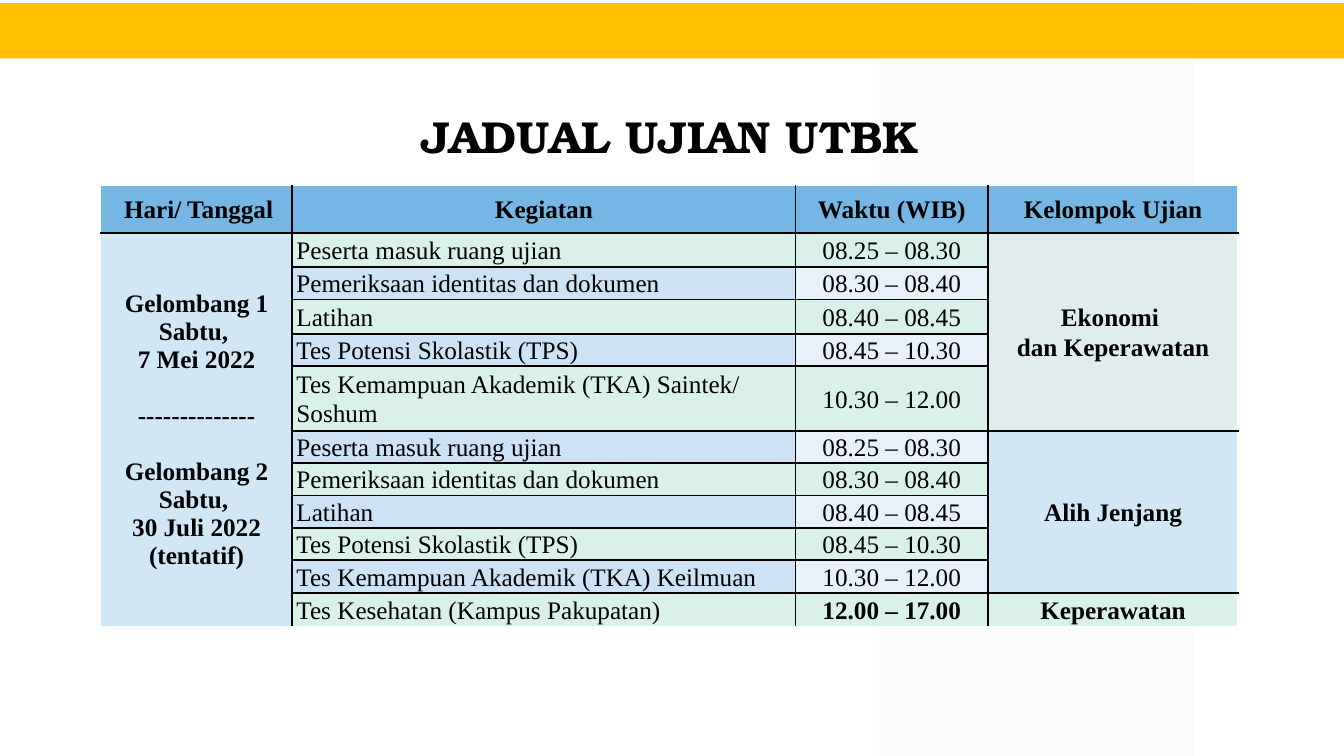
from lxml import etree
from pptx import Presentation
from pptx.dml.color import RGBColor
from pptx.enum.shapes import MSO_SHAPE
from pptx.enum.text import MSO_ANCHOR, PP_ALIGN
from pptx.oxml.ns import qn
from pptx.util import Inches, Pt

RECTANGLE = MSO_SHAPE.RECTANGLE
MIDDLE = MSO_ANCHOR.MIDDLE
LEFT, CENTER = PP_ALIGN.LEFT, PP_ALIGN.CENTER

TITLE = "JADUAL UJIAN UTBK"
HEADERS = ["Hari/ Tanggal", "Kegiatan", "Waktu (WIB)", "Kelompok Ujian"]
DIVIDER = "--------------"
DATES = ["Gelombang 1", "Sabtu, ", "7 Mei 2022", DIVIDER,
         "Gelombang 2", "Sabtu, ", "30 Juli 2022", "(tentatif)"]
SESSIONS = [
    ("Peserta masuk ruang ujian", "08.25 – 08.30"),
    ("Pemeriksaan identitas dan dokumen", "08.30 – 08.40"),
    ("Latihan", "08.40 – 08.45"),
    ("Tes Potensi Skolastik (TPS)", "08.45 – 10.30"),
    ("Tes Kemampuan Akademik (TKA) Saintek/ Soshum", "10.30 – 12.00"),
    ("Peserta masuk ruang ujian", "08.25 – 08.30"),
    ("Pemeriksaan identitas dan dokumen", "08.30 – 08.40"),
    ("Latihan", "08.40 – 08.45"),
    ("Tes Potensi Skolastik (TPS)", "08.45 – 10.30"),
    ("Tes Kemampuan Akademik (TKA) Keilmuan", "10.30 – 12.00"),
    ("Tes Kesehatan (Kampus Pakupatan)", "12.00 – 17.00"),
]
# first row, last row, lines, fill
GROUPS = [
    (1, 5, ["Ekonomi ", "dan Keperawatan"], "E0EDEC"),
    (6, 10, ["Alih Jenjang"], "D1E7F6"),
    (11, 11, ["Keperawatan"], "D9F1EA"),
]
COLUMN_WIDTHS = [1.9, 4.99, 1.91, 2.48]
ROW_HEIGHTS = [0.47, 0.34, 0.32, 0.34, 0.32, 0.64] + [0.32] * 5 + [0.34]

THEME = {
    "title_font": "TeX Gyre Bonum", "title_size": 32,
    "table_font": "Times New Roman", "table_size": 18,
    "text": "000000", "bar": "FFC000", "panel": "F2F2F2",
    "header": "75B6E5", "dates": "D1E7F6",
    "bands": [("D9F1EA", "D9F1EA"), ("CDE3F5", "E8F1FA")],
    "inner_line": ("000000", 1.5), "outer_line": ("FFFFFF", 1),
}


def style_runs(paragraph, font_name, size, bold):
    for run in paragraph.runs:
        run.font.name = font_name
        run.font.size = Pt(size)
        run.font.bold = bold
        run.font.color.rgb = RGBColor.from_string(THEME["text"])


def add_block(slide, left, top, width, height, color):
    block = slide.shapes.add_shape(
        RECTANGLE, Inches(left), Inches(top), Inches(width), Inches(height))
    block.shadow.inherit = False
    block.fill.solid()
    block.fill.fore_color.rgb = RGBColor.from_string(color)
    block.line.fill.background()
    return block


def fill_cell(cell, lines, color, bold=False, align=CENTER, spacing=1.07, indent=0):
    cell.margin_left = cell.margin_right = cell.margin_top = cell.margin_bottom = 0
    cell.vertical_anchor = MIDDLE
    cell.fill.solid()
    cell.fill.fore_color.rgb = RGBColor.from_string(color)
    cell.text_frame.text = "\n".join(lines)
    for paragraph in cell.text_frame.paragraphs:
        paragraph.alignment = align
        paragraph.line_spacing = spacing
        if indent:
            paragraph._p.get_or_add_pPr().set("marL", str(Inches(indent)))
        style_runs(paragraph, THEME["table_font"], THEME["table_size"], bold)


def set_borders(cell, outer_sides):
    """Draw outer sides in the light line and all others in the dark one."""
    properties = cell._tc.get_or_add_tcPr()
    for position, side in enumerate("LRTB"):
        color, width = THEME["outer_line" if side in outer_sides else "inner_line"]
        line = etree.Element(qn("a:ln" + side), w=str(Pt(width)))
        fill = etree.SubElement(line, qn("a:solidFill"))
        etree.SubElement(fill, qn("a:srgbClr"), val=color)
        properties.insert(position, line)


def add_schedule(slide):
    row_count, column_count = len(ROW_HEIGHTS), len(COLUMN_WIDTHS)
    last_row, last_column = row_count - 1, column_count - 1
    schedule = slide.shapes.add_table(
        row_count, column_count, Inches(1), Inches(1.84),
        Inches(sum(COLUMN_WIDTHS)), Inches(sum(ROW_HEIGHTS))).table
    schedule.first_row = schedule.horz_banding = False
    for column, width in zip(schedule.columns, COLUMN_WIDTHS):
        column.width = Inches(width)
    for row, height in zip(schedule.rows, ROW_HEIGHTS):
        row.height = Inches(height)

    for column, header in enumerate(HEADERS):
        fill_cell(schedule.cell(0, column), [header], THEME["header"], bold=True,
                  indent=0 if column else 0.04)

    for row, (activity, time) in enumerate(SESSIONS, start=1):
        activity_fill, time_fill = THEME["bands"][(row - 1) % 2]
        fill_cell(schedule.cell(row, 1), [activity], activity_fill,
                  align=LEFT, indent=0.04)
        fill_cell(schedule.cell(row, 2), [time], time_fill, bold=row == last_row)

    dates = schedule.cell(1, 0)
    dates.merge(schedule.cell(last_row, 0))
    fill_cell(dates, DATES, THEME["dates"], bold=True, spacing=1.0)
    divider = dates.text_frame.paragraphs[DATES.index(DIVIDER)]
    divider.space_before = divider.space_after = Pt(20)

    bottoms = {(1, 0): last_row}
    for first, last, lines, color in GROUPS:
        group = schedule.cell(first, last_column)
        if last > first:
            group.merge(schedule.cell(last, last_column))
        fill_cell(group, lines, color, bold=True)
        bottoms[first, last_column] = last

    for row in range(row_count):
        for column in range(column_count):
            edges = {"L": column == 0, "R": column == last_column, "T": row == 0,
                     "B": bottoms.get((row, column), row) == last_row}
            set_borders(schedule.cell(row, column),
                        [side for side, is_outer in edges.items() if is_outer])


def main():
    presentation = Presentation()
    presentation.slide_width = Inches(13.33)
    presentation.slide_height = Inches(7.5)
    slide = presentation.slides.add_slide(presentation.slide_layouts[6])

    panel = add_block(slide, 8.72, 0, 3.12, 7.5, THEME["panel"])
    panel_color = panel._element.spPr.find(qn("a:solidFill"))[0]
    etree.SubElement(panel_color, qn("a:alpha"), val="30000")
    add_block(slide, 0, 0.03, 13.33, 0.55, THEME["bar"])

    title = slide.shapes.add_textbox(
        Inches(1.19), Inches(1.03), Inches(10.92), Inches(0.64)).text_frame
    title.word_wrap = True
    title.text = TITLE
    title.paragraphs[0].alignment = CENTER
    style_runs(title.paragraphs[0], THEME["title_font"], THEME["title_size"], True)

    add_schedule(slide)
    presentation.save("out.pptx")


if __name__ == "__main__":
    main()
